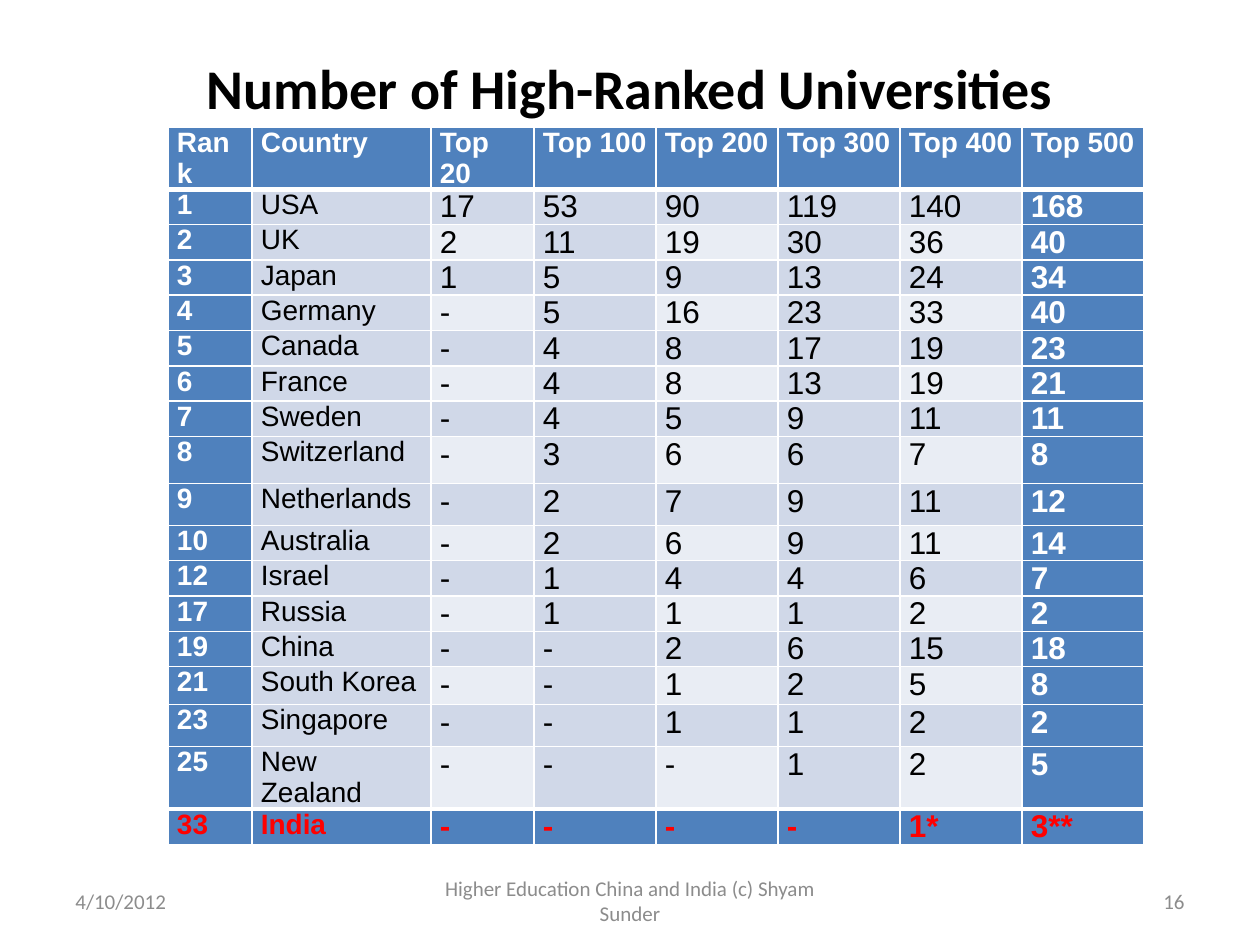
from lxml.etree import SubElement
from pptx import Presentation
from pptx.dml.color import RGBColor
from pptx.enum.text import MSO_ANCHOR as Anchor, PP_ALIGN as Align
from pptx.oxml.ns import qn
from pptx.util import Emu, Pt

EMU_PER_PX = 914400 / 126
COLORS = {
    "black": "000000", "white": "FFFFFF", "gray": "8C8C8C", "red": "FF0000",
    "blue": "4F81BD", "band": "D0D8E8", "light": "E9EDF4",
}
HEADINGS = ["Rank", "Country", "Top 20", "Top 100", "Top 200", "Top 300", "Top 400", "Top 500"]
COUNTRIES = [
    ("1", "USA", "17 53 90 119 140 168"),
    ("2", "UK", "2 11 19 30 36 40"),
    ("3", "Japan", "1 5 9 13 24 34"),
    ("4", "Germany", "- 5 16 23 33 40"),
    ("5", "Canada", "- 4 8 17 19 23"),
    ("6", "France", "- 4 8 13 19 21"),
    ("7", "Sweden", "- 4 5 9 11 11"),
    ("8", "Switzerland", "- 3 6 6 7 8"),
    ("9", "Netherlands", "- 2 7 9 11 12"),
    ("10", "Australia", "- 2 6 9 11 14"),
    ("12", "Israel", "- 1 4 4 6 7"),
    ("17", "Russia", "- 1 1 1 2 2"),
    ("19", "China", "- - 2 6 15 18"),
    ("21", "South Korea", "- - 1 2 5 8"),
    ("23", "Singapore", "- - 1 1 2 2"),
    ("25", "New Zealand", "- - - 1 2 5"),
    ("33", "India", "- - - - 1* 3**"),
]
COLUMN_WIDTHS = [84, 179, 103] + [122] * 5
ROW_HEIGHT = 30
TALL_ROWS = {8: 47, 9: 42, 14: 38, 15: 42, 16: 42}


def px(length):
    return Emu(round(length * EMU_PER_PX))


def rgb(name):
    return RGBColor.from_string(COLORS[name])


def style_text(frame, font_name, size, color, bold=False, align=Align.LEFT):
    for paragraph in frame.paragraphs:
        paragraph.alignment = align
        for run in paragraph.runs:
            font = run.font
            font.name, font.size, font.bold = font_name, Pt(size), bold
            font.color.rgb = rgb(color)


def add_title(slide, left, top, width, height):
    title = slide.shapes.title
    title.left, title.top, title.width, title.height = map(px, (left, top, width, height))
    frame = title.text_frame
    frame.text = "Number of High-Ranked Universities"
    frame.vertical_anchor = Anchor.MIDDLE
    style_text(frame, "Calibri", 32, "black", True, Align.CENTER)


def set_borders(cell, top, bottom):
    """Draw white cell borders; top and bottom are widths in points."""
    properties = cell._tc.get_or_add_tcPr()
    for side, width in (("L", 1), ("R", 1), ("T", top), ("B", bottom)):
        line = SubElement(properties, qn(f"a:ln{side}"), w=str(Pt(width)))
        fill = SubElement(line, qn("a:solidFill"))
        SubElement(fill, qn("a:srgbClr"), val=COLORS["white"])


def format_cell(cell, row, column, last_row, last_column):
    emphasized = row in (0, last_row) or column in (0, last_column)
    if emphasized:
        fill, color = "blue", "red" if row == last_row else "white"
    else:
        fill, color = "light" if row % 2 == column % 2 == 0 else "band", "black"
    set_borders(cell, 3 if row in (1, last_row) else 1,
                3 if row in (0, last_row - 1) else 1)
    cell.fill.solid()
    cell.fill.fore_color.rgb = rgb(fill)
    cell.margin_left = cell.margin_right = px(9)
    cell.margin_top = cell.margin_bottom = 0
    size = 16 if row == 0 or column < 2 else 18
    style_text(cell.text_frame, "Arial", size, color, emphasized)


def add_ranking(slide, left, top):
    rows = [HEADINGS] + [[rank, country, *counts.split()] for rank, country, counts in COUNTRIES]
    heights = [TALL_ROWS.get(row, ROW_HEIGHT) for row in range(len(rows))]
    table = slide.shapes.add_table(
        len(rows), len(HEADINGS), px(left), px(top),
        px(sum(COLUMN_WIDTHS)), px(sum(heights))).table
    for column, width in zip(table.columns, COLUMN_WIDTHS):
        column.width = px(width)
    for r, (values, height) in enumerate(zip(rows, heights)):
        table.rows[r].height = px(height)
        for c, value in enumerate(values):
            cell = table.cell(r, c)
            cell.text_frame.text = value
            format_cell(cell, r, c, len(rows) - 1, len(HEADINGS) - 1)


def add_footer(slide, left, top, width, height):
    side, center = 294, 400
    parts = [
        ("4/10/2012", 0, side, Align.LEFT),
        ("Higher Education China and India (c) Shyam Sunder",
         (width - center) // 2, center, Align.CENTER),
        ("16", width - side, side, Align.RIGHT),
    ]
    for text, offset, part_width, align in parts:
        box = slide.shapes.add_textbox(px(left + offset), px(top), px(part_width), px(height))
        frame = box.text_frame
        frame.word_wrap = True
        frame.vertical_anchor = Anchor.MIDDLE
        frame.text = text
        style_text(frame, "Calibri", 12, "gray", align=align)


def main():
    deck = Presentation()
    deck.slide_width, deck.slide_height = px(1260), px(945)
    slide = deck.slides.add_slide(deck.slide_layouts[5])
    add_title(slide, 63, 38, 1134, 98)
    add_ranking(slide, 168, 127)
    add_footer(slide, 63, 876, 1134, 50)
    deck.save("out.pptx")


if __name__ == "__main__":
    main()
